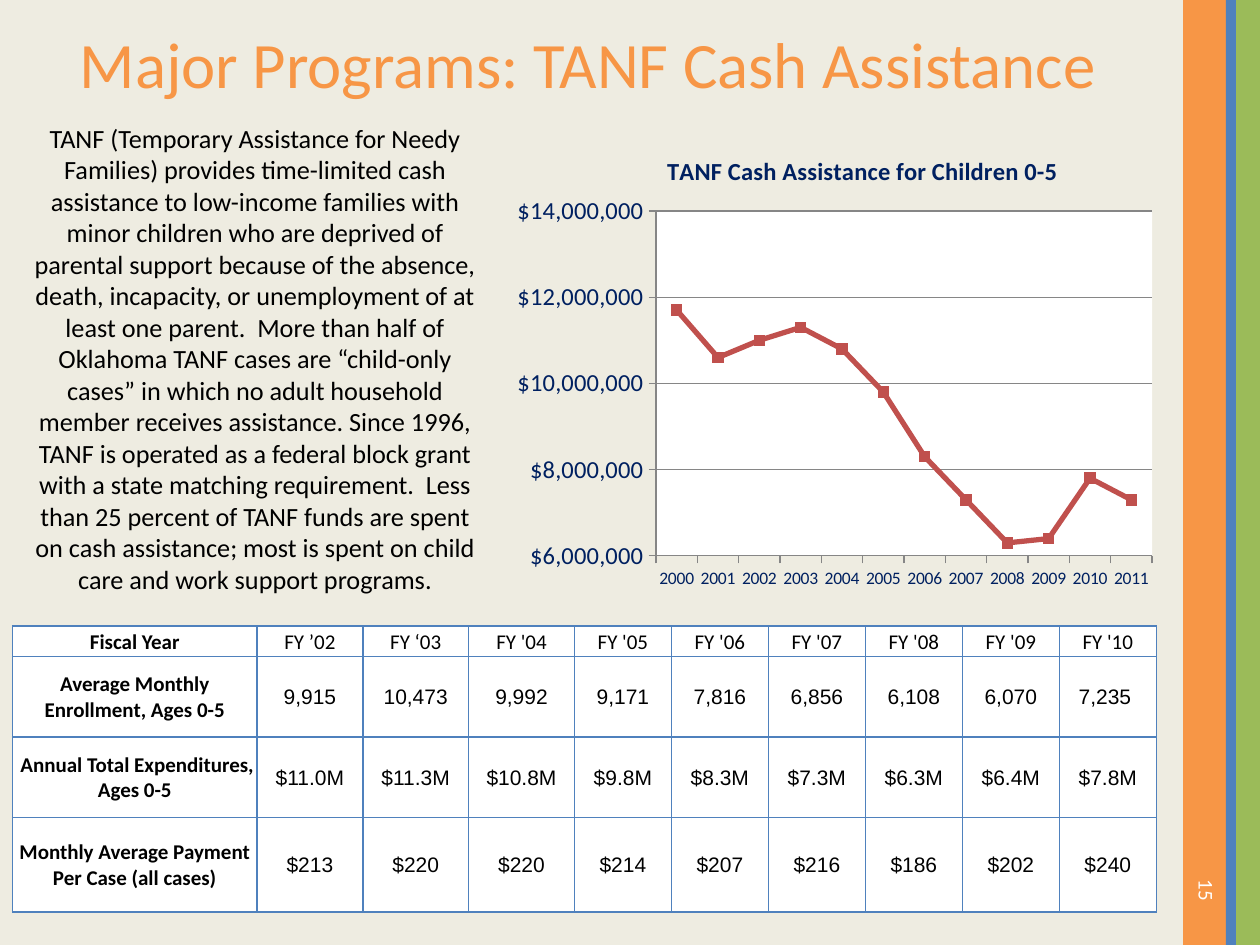
"""Build the TANF cash assistance slide with a text, a line chart and a table."""
import pptx
import pptx.chart.data
import pptx.dml.color
import pptx.enum.chart
import pptx.enum.shapes
import pptx.enum.text
import pptx.oxml
import pptx.util
from pptx.util import Inches, Pt

ALIGN = pptx.enum.text.PP_ALIGN
MIDDLE = pptx.enum.text.MSO_ANCHOR.MIDDLE
NS = ('xmlns:a="http://schemas.openxmlformats.org/drawingml/2006/main" '
      'xmlns:c="http://schemas.openxmlformats.org/drawingml/2006/chart"')


def rgb(value):
    return pptx.dml.color.RGBColor.from_string(value)


def style(font, size, color, bold=False, name="Calibri"):
    font.size, font.bold, font.name = Pt(size), bold, name
    font.color.rgb = rgb(color)


prs = pptx.Presentation()
prs.slide_width, prs.slide_height = Inches(10), Inches(7.5)
s = prs.slides.add_slide(prs.slide_layouts[6])
s.background.fill.solid()
s.background.fill.fore_color.rgb = rgb("EEECE1")

for left, width, color in [(9.39, 0.35, "F79646"), (9.81, 0.19, "9BBB59"), (9.73, 0.08, "4F81BD")]:
    sp = s.shapes.add_shape(pptx.enum.shapes.MSO_SHAPE.RECTANGLE,
                            Inches(left), 0, Inches(width), prs.slide_height)
    sp.shadow.inherit = False
    sp.fill.solid()
    sp.fill.fore_color.rgb = rgb(color)
    sp.line.fill.background()

body = (
    "TANF (Temporary Assistance for Needy Families) provides time-limited cash assistance to "
    "low-income families with minor children who are deprived of parental support because of the "
    "absence, death, incapacity, or unemployment of at least one parent.  More than half of "
    "Oklahoma TANF cases are “child-only cases” in which no adult household member receives "
    "assistance. Since 1996, TANF is operated as a federal block grant with a state matching "
    "requirement.  Less than 25 percent of TANF funds are spent on cash assistance; most is spent "
    "on child care and work support programs."
)
texts = [
    ("Major Programs: TANF Cash Assistance", (0.25, 0.09, 8.83, 0.83), 37, "F79646", ALIGN.CENTER, 0),
    (body, (0.11, 0.92, 3.83, 3.89), 15, "000000", ALIGN.CENTER, 0),
    ("15", (9.05, 6.52, 1.06, 0.4), 12, "FFFFFF", ALIGN.RIGHT, 90),
]
for text, box, size, color, align, rotation in texts:
    sp = s.shapes.add_textbox(*map(Inches, box))
    sp.rotation = rotation
    tf = sp.text_frame
    tf.word_wrap = True
    tf.text = text
    if rotation:
        tf.vertical_anchor = MIDDLE
    elif size == 37:
        tf.margin_top = tf.margin_bottom = Inches(0.1)
    p = tf.paragraphs[0]
    p.alignment = align
    style(p.runs[0].font, size, color)

rows = [
    ["Fiscal Year", "FY ’02", "FY ‘03", "FY '04", "FY '05", "FY '06", "FY '07", "FY '08", "FY '09", "FY '10"],
    ["Average Monthly Enrollment, Ages 0-5",
     "9,915", "10,473", "9,992", "9,171", "7,816", "6,856", "6,108", "6,070", "7,235 "],
    [" Annual Total Expenditures, Ages 0-5",
     "$11.0M", "$11.3M", "$10.8M", "$9.8M", "$8.3M", "$7.3M", "$6.3M", "$6.4M", "$7.8M"],
    ["Monthly Average Payment Per Case (all cases)",
     "$213", "$220", "$220", "$214", "$207", "$216", "$186", "$202", "$240"],
]
table = s.shapes.add_table(4, 10, Inches(0.1), Inches(4.97), Inches(9.07), Inches(2.28)).table
for column, width in zip(table.columns, [1.94] + [0.84] * 3 + [0.77] * 6):
    column.width = Inches(width)
for row, height in zip(table.rows, [0.24, 0.64, 0.64, 0.75]):
    row.height = Inches(height)
for i, values in enumerate(rows):
    for j, value in enumerate(values):
        cell = table.cell(i, j)
        cell.text = value
        cell.vertical_anchor = MIDDLE
        cell.margin_left = cell.margin_right = cell.margin_top = Inches(0.01)
        cell.margin_bottom = 0
        p = cell.text_frame.paragraphs[0]
        p.alignment = ALIGN.CENTER
        style(p.runs[0].font, 12, "000000", j == 0, "Arial" if i and j else "Calibri")
        for side in ("lnL", "lnR", "lnT", "lnB"):
            cell._tc.get_or_add_tcPr().append(pptx.oxml.parse_xml(
                f'<a:{side} {NS} w="12700"><a:solidFill><a:srgbClr val="4F81BD"/></a:solidFill></a:{side}>'))
        cell.fill.solid()
        cell.fill.fore_color.rgb = rgb("FFFFFF")

data = pptx.chart.data.CategoryChartData()
data.categories = [str(year) for year in range(2000, 2012)]
millions = [11.7, 10.6, 11.0, 11.3, 10.8, 9.8, 8.3, 7.3, 6.3, 6.4, 7.8, 7.3]
data.add_series("Series 1", [round(value * 1000000) for value in millions])
chart = s.shapes.add_chart(pptx.enum.chart.XL_CHART_TYPE.LINE_MARKERS,
                           Inches(3.93), Inches(1), Inches(5.32), Inches(3.75), data).chart
style(chart.font, 10, "000000")
chart.has_legend = False
chart.has_title = True
tf = chart.chart_title.text_frame
tf.text = "TANF Cash Assistance for Children 0-5 "
style(tf.paragraphs[0].runs[0].font, 14, "002060", True)
chart.chart_title.include_in_layout = False

cat, val = chart.category_axis, chart.value_axis
for axis, size in [(cat, 10), (val, 14)]:
    style(axis.tick_labels.font, size, "002060")
    axis.major_tick_mark = pptx.enum.chart.XL_TICK_MARK.OUTSIDE
    axis.format.line.color.rgb = rgb("868686")
val.minimum_scale, val.maximum_scale, val.major_unit = 6000000, 14000000, 2000000
val.tick_labels.number_format = '"$"#,##0'
val.tick_labels.number_format_is_linked = False
val.major_gridlines.format.line.color.rgb = rgb("868686")

plot = chart.plots[0]
plot.vary_by_categories = False
series = plot.series[0]
series.smooth = False
series.format.line.color.rgb = rgb("C0504D")
series.format.line.width = Pt(3)
series.marker.style = pptx.enum.chart.XL_MARKER_STYLE.SQUARE
series.marker.size = 6
series.marker.format.fill.solid()
series.marker.format.fill.fore_color.rgb = rgb("C0504D")
series.marker.format.line.color.rgb = rgb("C0504D")

area = chart._chartSpace.chart.plotArea
for old in area.findall(pptx.oxml.ns.qn("c:layout")):
    area.remove(old)
area.insert(0, pptx.oxml.parse_xml(
    f'<c:layout {NS}><c:manualLayout><c:layoutTarget val="inner"/>'
    '<c:xMode val="edge"/><c:yMode val="edge"/><c:x val="0.24"/><c:y val="0.18"/>'
    '<c:w val="0.74"/><c:h val="0.73"/></c:manualLayout></c:layout>'))
area.append(pptx.oxml.parse_xml(
    f'<c:spPr {NS}><a:solidFill><a:srgbClr val="FFFFFF"/></a:solidFill></c:spPr>'))
title = chart.chart_title._element
for old in title.findall(pptx.oxml.ns.qn("c:layout")):
    title.remove(old)
title.insert(1, pptx.oxml.parse_xml(
    f'<c:layout {NS}><c:manualLayout><c:xMode val="edge"/><c:yMode val="edge"/>'
    '<c:x val="0.25"/><c:y val="0.05"/></c:manualLayout></c:layout>'))

prs.save("out.pptx")
